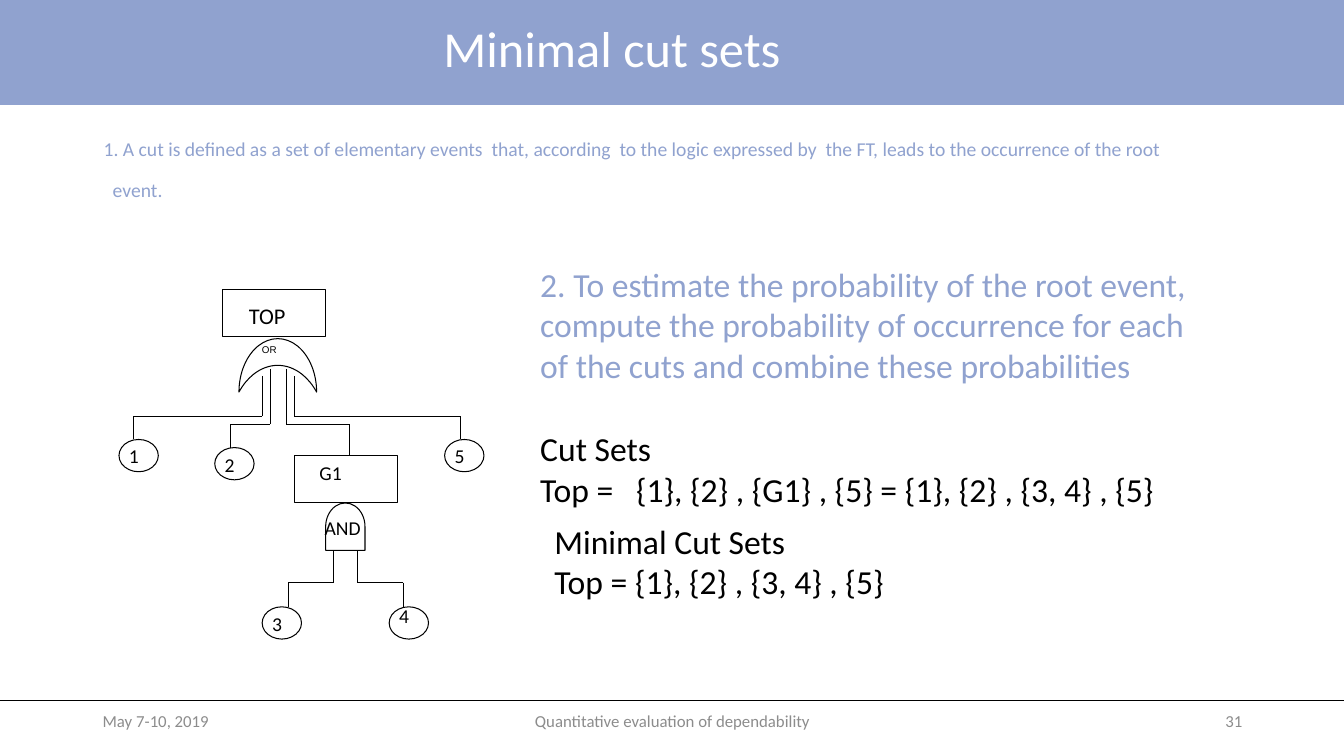
from itertools import pairwise

from lxml.etree import SubElement
from pptx import Presentation
from pptx.dml.color import RGBColor
from pptx.enum.shapes import MSO_CONNECTOR, MSO_SHAPE
from pptx.enum.text import MSO_ANCHOR, PP_ALIGN
from pptx.oxml.ns import qn
from pptx.util import Inches, Pt

COLORS = {"accent": "90A2CF", "ink": "000000", "paper": "FFFFFF", "muted": "8C8C8C"}
EVENT_SIZE = (0.39, 0.32)
BOX_SIZE = (1.02, 0.47)

# label: (circle left, circle top, label top)
EVENTS = {
    "1": (1.18, 4.36, 4.36),
    "2": (2.13, 4.44, 4.44),
    "3": (2.6, 6.02, 6.02),
    "4": (3.86, 6.02, 5.94),
    "5": (4.41, 4.36, 4.36),
}

# gate x, gate y, bend y, event x, event y
BRANCHES = [
    (2.6, 3.73, 4.13, 1.32, 4.36),
    (2.68, 3.66, 4.21, 2.29, 4.44),
    (2.84, 3.66, 4.21, 3.47, 4.52),
    (2.92, 3.73, 4.13, 4.57, 4.36),
    (3.31, 5.47, 5.78, 2.86, 6.02),
    (3.55, 5.47, 5.78, 4, 6.02),
]


def rgb(name):
    return RGBColor.from_string(COLORS[name])


def add_run(paragraph, text, size, color, font="Calibri"):
    run = paragraph.add_run()
    run.text = text
    run.font.size = Pt(size)
    run.font.name = font
    run.font.color.rgb = rgb(color)


def add_text(slide, lines, left, top, width, height, size, color="ink",
             font="Calibri", align=PP_ALIGN.LEFT, anchor=MSO_ANCHOR.TOP, wrap=True):
    box = slide.shapes.add_textbox(Inches(left), Inches(top), Inches(width), Inches(height))
    frame = box.text_frame
    frame.word_wrap = wrap
    frame.vertical_anchor = anchor
    for index, line in enumerate(lines):
        paragraph = frame.add_paragraph() if index else frame.paragraphs[0]
        paragraph.alignment = align
        add_run(paragraph, line, size, color, font)
    return frame


def add_outline(slide, kind, left, top, width, height, rotation=0):
    """Add an unfilled fault-tree symbol with a thin black outline."""
    symbol = slide.shapes.add_shape(
        kind, Inches(left), Inches(top), Inches(width), Inches(height))
    symbol.shadow.inherit = False
    symbol.fill.background()
    symbol.line.color.rgb = rgb("ink")
    symbol.line.width = Pt(0.75)
    symbol.rotation = rotation


def add_line(slide, start, end, width=0.75):
    line = slide.shapes.add_connector(
        MSO_CONNECTOR.STRAIGHT, *(Inches(value) for value in (*start, *end)))
    line.line.color.rgb = rgb("ink")
    line.line.width = Pt(width)
    SubElement(line._element.spPr, qn("a:effectLst"))


def add_header(slide):
    band = slide.shapes.add_shape(
        MSO_SHAPE.RECTANGLE, 0, 0, Inches(13.33), Inches(1.04))
    band.shadow.inherit = False
    band.fill.solid()
    band.fill.fore_color.rgb = rgb("accent")
    band.line.fill.background()
    slide.shapes._spTree.insert(2, band._element)  # behind the title

    title = slide.shapes.title
    title.left, title.top = Inches(0), Inches(0)
    title.width, title.height = Inches(12.14), Inches(1.02)
    title.text_frame.vertical_anchor = MSO_ANCHOR.MIDDLE
    heading = title.text_frame.paragraphs[0]
    heading.alignment = PP_ALIGN.CENTER
    heading.line_spacing = 0.9
    add_run(heading, "Minimal cut sets", 36, "paper")


def add_footer(slide):
    add_line(slide, (0, 6.95), (13.33, 6.95), 0.5)
    for text, left, width, align in [
        ("May 7-10, 2019", 0.92, 3, PP_ALIGN.LEFT),
        ("Quantitative evaluation of dependability", 4.42, 4.5, PP_ALIGN.CENTER),
        ("31", 9.42, 3, PP_ALIGN.RIGHT),
    ]:
        add_text(slide, [text], left, 6.95, width, 0.4, 12, "muted",
                 align=align, anchor=MSO_ANCHOR.MIDDLE)


def add_fault_tree(slide):
    add_outline(slide, MSO_SHAPE.RECTANGLE, 2.21, 2.87, *BOX_SIZE)
    add_outline(slide, MSO_SHAPE.RECTANGLE, 2.92, 4.52, *BOX_SIZE)
    add_outline(slide, MSO_SHAPE.MOON, 2.49, 3.24, 0.53, 0.77, rotation=90)
    add_outline(slide, MSO_SHAPE.FLOWCHART_DELAY, 3.19, 5.03, 0.47, 0.39, rotation=270)

    for gate_x, gate_y, bend_y, event_x, event_y in BRANCHES:
        corners = [(gate_x, gate_y), (gate_x, bend_y), (event_x, bend_y), (event_x, event_y)]
        for start, end in pairwise(corners):
            add_line(slide, start, end)

    for label, (left, top, label_top) in EVENTS.items():
        add_outline(slide, MSO_SHAPE.OVAL, left, top, *EVENT_SIZE)
        add_text(slide, [label], left, label_top, 0.39, 0.33, 14)

    add_text(slide, ["TOP"], 2.37, 2.95, 0.57, 0.37, 16, wrap=False)
    add_text(slide, ["G1"], 3.07, 4.52, 0.72, 0.33, 14)
    add_text(slide, ["AND"], 3.12, 5.07, 0.72, 0.33, 14)
    add_text(slide, ["OR"], 2.5, 3.36, 0.49, 0.3, 7, font="Arial")


def add_explanation(slide):
    definition = add_text(slide, [
        "1. A cut is defined as a set of elementary events  that, according  to the logic "
        "expressed by  the FT, leads to the occurrence of the root event."
    ], 0.71, 1.15, 11, 0.91, 14, "accent").paragraphs[0]
    definition.line_spacing = Pt(28.6)
    indents = definition._p.get_or_add_pPr()
    indents.set("marL", str(Inches(0.31)))
    indents.set("indent", str(Inches(-0.09)))

    add_text(slide, [
        "2. To estimate the probability of the root event, compute the probability of "
        "occurrence for each of the cuts and combine these probabilities"
    ], 5.26, 2.57, 6.67, 1.31, 24, "accent")
    add_text(slide, ["Cut Sets", "Top =   {1}, {2} , {G1} , {5} = {1}, {2} , {3, 4} , {5}"],
             5.26, 4.2, 6.4, 0.91, 24, wrap=False)
    add_text(slide, ["Minimal Cut Sets", "Top = {1}, {2} , {3, 4} , {5}"],
             5.4, 5.12, 3.57, 0.91, 24, wrap=False)


def main():
    deck = Presentation()
    deck.slide_width, deck.slide_height = Inches(13.33), Inches(7.5)
    slide = deck.slides.add_slide(deck.slide_layouts[5])
    add_header(slide)
    add_footer(slide)
    add_fault_tree(slide)
    add_explanation(slide)
    deck.save("out.pptx")


if __name__ == "__main__":
    main()
